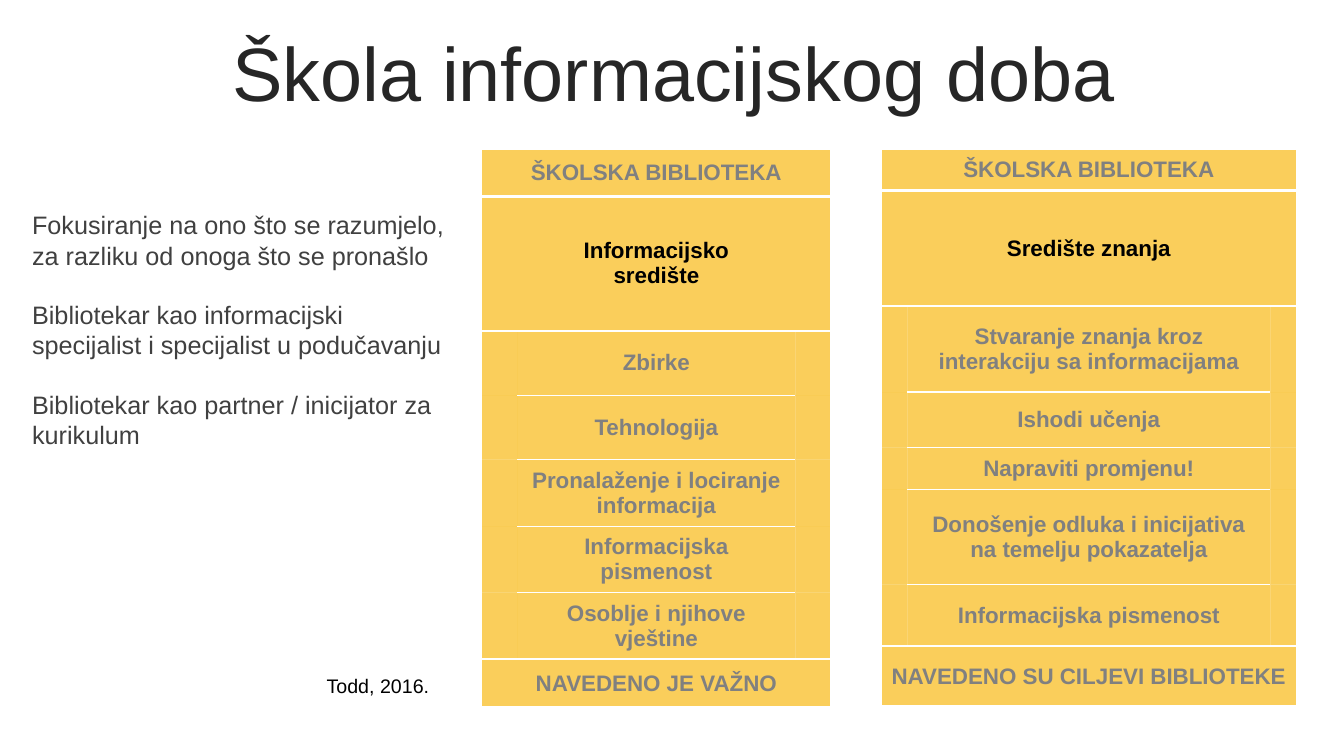
"""Build the slide on the school of the information age."""
from lxml import etree
from pptx import Presentation
from pptx.dml.color import RGBColor
from pptx.enum.text import MSO_ANCHOR, PP_ALIGN
from pptx.oxml.ns import qn
from pptx.util import Pt

PX = 9144
MID = MSO_ANCHOR.MIDDLE
CENTER = PP_ALIGN.CENTER
GOLD, GREY, BLACK, WHITE = "F8BA16", "808080", "000000", "FFFFFF"
EDGES = [2.25, 2.25, 1.5, 1, 1, 1, 1, 2.25, 2.25]


def paint(font, size, color, bold=False):
    font.name, font.size, font.bold = "Arial", Pt(size), bold
    font.color.rgb = RGBColor.from_string(color)


def rule(cell, spot, side, width):
    line = etree.Element(qn("a:ln" + side), w=str(int(width * 12700)))
    if width:
        fill = etree.SubElement(line, qn("a:solidFill"))
        etree.SubElement(fill, qn("a:srgbClr"), val=WHITE)
    else:
        etree.SubElement(line, qn("a:noFill"))
    cell._tc.get_or_add_tcPr().insert(spot, line)


deck = Presentation()
deck.slide_width, deck.slide_height = 1333 * PX, 750 * PX
slide = deck.slides.add_slide(deck.slide_layouts[5])

title = slide.shapes.title
title.left, title.top, title.width, title.height = [n * PX for n in (35, 37, 1266, 79)]
title.text_frame.text = "Škola informacijskog doba"
title.text_frame.vertical_anchor = MID
head = title.text_frame.paragraphs[0]
head.alignment, head.line_spacing = CENTER, 0.9
paint(head.font, 54, "262626")

tables = [
    (477, 348, [36, 276, 36], [48, 133, 64, 64, 66, 66, 66, 48],
     ["ŠKOLSKA BIBLIOTEKA", "Informacijsko\nsredište", "Zbirke", "Tehnologija",
      "Pronalaženje i lociranje informacija", "Informacijska pismenost",
      "Osoblje i njihove vještine", "NAVEDENO JE VAŽNO"]),
    (873, 414, [27, 360, 27], [42, 115, 85, 55, 42, 94, 61, 60],
     ["ŠKOLSKA BIBLIOTEKA", "Središte znanja",
      "Stvaranje znanja kroz interakciju sa informacijama", "Ishodi učenja",
      "Napraviti promjenu!",
      "Donošenje odluka i inicijativa na temelju pokazatelja",
      "Informacijska pismenost", "NAVEDENO SU CILJEVI BIBLIOTEKE"]),
]
for left, width, cols, rows, words in tables:
    frame = slide.shapes.add_table(8, 3, left * PX, 147 * PX, width * PX, sum(rows) * PX)
    table = frame.table
    table.first_row = table.horz_banding = False
    for col, size in zip(table.columns, cols):
        col.width = size * PX
    for row, (size, text) in enumerate(zip(rows, words)):
        table.rows[row].height = size * PX
        wide = row in (0, 1, 7)
        for col in range(3):
            cell = table.cell(row, col)
            cell.fill.solid()
            cell.fill.fore_color.rgb = RGBColor.from_string(GOLD)
            tint = cell._tc.tcPr.find(".//" + qn("a:srgbClr"))
            etree.SubElement(tint, qn("a:alpha"), val="70000")
            top, base = [w if w > 1 or col == 1 else 0 for w in EDGES[row:row + 2]]
            sides = {"L": 2.25 if col == 0 else 0, "R": 2.25 if col == 2 or wide else 0,
                     "T": top, "B": base}
            for spot, (side, weight) in enumerate(sides.items()):
                rule(cell, spot, side, weight)
        if wide:
            table.cell(row, 0).merge(table.cell(row, 2))
        cell = table.cell(row, 0 if wide else 1)
        cell.text = text
        cell.vertical_anchor = MID
        for para in cell.text_frame.paragraphs:
            para.alignment = CENTER
            paint(para.font, 16, BLACK if row == 1 else GREY, True)

notes = [
    ((22, 203, 431, 252), 18, "404040",
     ["Fokusiranje na ono što se razumjelo, za razliku od onoga što se pronašlo",
      "Bibliotekar kao informacijski specijalist i specijalist u podučavanju",
      "Bibliotekar kao partner / inicijator za kurikulum"]),
    ((314, 664, 162, 34), 14, BLACK, ["Todd, 2016."]),
]
for place, size, color, lines in notes:
    box = slide.shapes.add_textbox(*[n * PX for n in place]).text_frame
    box.word_wrap = True
    box.text = "\n".join(lines)
    for spot, para in enumerate(box.paragraphs):
        para.space_before = Pt(21 if spot else 0)
        paint(para.font, size, color)

deck.save("out.pptx")
